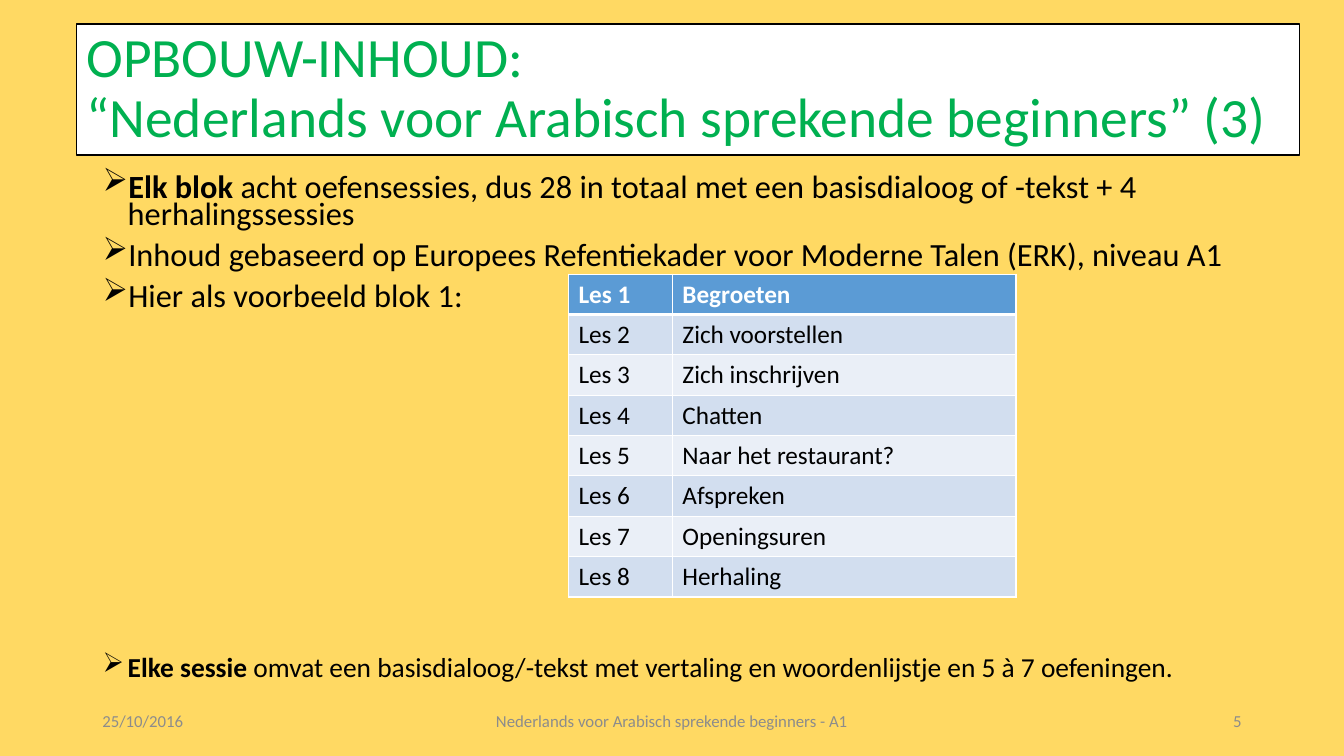
from lxml.etree import SubElement
from pptx import Presentation
from pptx.dml.color import RGBColor
from pptx.enum.shapes import MSO_SHAPE
from pptx.enum.text import MSO_ANCHOR, PP_ALIGN
from pptx.oxml.ns import qn
from pptx.util import Pt

COLORS = {
    "background": "FFD963",
    "title": "00B050",
    "white": "FFFFFF",
    "black": "000000",
    "footer": "8C8C8C",
    "header": "5B9BD5",
    "band_dark": "D2DEEF",
    "band_light": "EAEFF7",
}
FONT = "Calibri"
LESSONS = [
    "Begroeten", "Zich voorstellen", "Zich inschrijven", "Chatten",
    "Naar het restaurant?", "Afspreken", "Openingsuren", "Herhaling",
]
INTRO = [
    ("Elk blok ", "acht oefensessies, dus 28 in totaal met een basisdialoog "
     "of -tekst + 4 herhalingssessies"),
    ("", "Inhoud gebaseerd op Europees Refentiekader voor Moderne Talen (ERK), niveau A1"),
    ("", "Hier als voorbeeld blok 1:"),
]
SESSION = [
    ("Elke sessie ", "omvat een basisdialoog/-tekst met vertaling en "
     "woordenlijstje en 5 à 7 oefeningen."),
]
FOOTERS = [
    (66, 216, "25/10/2016", PP_ALIGN.LEFT),
    (318, 324, "Nederlands voor Arabisch sprekende beginners - A1", PP_ALIGN.CENTER),
    (678, 216, "5", PP_ALIGN.RIGHT),
]


def rgb(name):
    return RGBColor.from_string(COLORS[name])


def set_font(p, size, color, bold=None):
    p.font.name = FONT
    p.font.size = Pt(size)
    p.font.color.rgb = rgb(color)
    p.font.bold = bold


def add_title(s, text):
    sp = s.shapes.add_shape(MSO_SHAPE.RECTANGLE, Pt(54.7), Pt(17.2), Pt(873.4), Pt(93.6))
    sp.shadow.inherit = False
    sp.fill.solid()
    sp.fill.fore_color.rgb = rgb("white")
    sp.line.color.rgb = rgb("black")
    sp.line.width = Pt(1)
    tf = sp.text_frame
    tf.word_wrap = True
    tf.vertical_anchor = MSO_ANCHOR.MIDDLE
    p = tf.paragraphs[0]
    p.text = text
    p.alignment = PP_ALIGN.LEFT
    p.line_spacing = 0.9
    set_font(p, 39.6, "title")


def add_text_frame(s, left, top, width, height):
    tf = s.shapes.add_textbox(Pt(left), Pt(top), Pt(width), Pt(height)).text_frame
    tf.word_wrap = True
    return tf


def add_bullets(s, top, height, items, size):
    tf = add_text_frame(s, 66.2, top, 828, height)
    for i, (lead, rest) in enumerate(items):
        p = tf.add_paragraph() if i else tf.paragraphs[0]
        p.line_spacing = 0.7
        p.space_before = Pt(10 if i else 0)
        set_font(p, size, "black")
        if lead:
            r = p.add_run()
            r.text = lead
            r.font.bold = True
        p.add_run().text = rest
        pPr = p._p.get_or_add_pPr()
        pPr.set("marL", str(Pt(18)))
        pPr.set("indent", str(Pt(-18)))
        bullet = pPr.makeelement(qn("a:buChar"), {"char": "➢"})
        pPr.find(qn("a:defRPr")).addprevious(bullet)


def set_borders(cell, bottom):
    tcPr = cell._tc.get_or_add_tcPr()
    widths = {"a:lnL": 1, "a:lnR": 1, "a:lnT": 1, "a:lnB": bottom}
    for tag, width in widths.items():
        ln = SubElement(tcPr, qn(tag), w=str(Pt(width)))
        fill = SubElement(ln, qn("a:solidFill"))
        SubElement(fill, qn("a:srgbClr"), val=COLORS["white"])


def add_lessons(s, lessons):
    row_height = 28.8
    frame = s.shapes.add_table(len(lessons), 2, Pt(406.1), Pt(195.8),
                               Pt(319.7), Pt(row_height * len(lessons)))
    table = frame.table
    for column, width in zip(table.columns, (74.2, 245.5)):
        column.width = Pt(width)
    for i, lesson in enumerate(lessons):
        table.rows[i].height = Pt(row_height)
        header = i == 0
        band = "header" if header else "band_dark" if i % 2 else "band_light"
        for cell, text in zip(table.rows[i].cells, (f"Les {i + 1}", lesson)):
            set_borders(cell, 3 if header else 1)
            cell.fill.solid()
            cell.fill.fore_color.rgb = rgb(band)
            p = cell.text_frame.paragraphs[0]
            p.text = text
            set_font(p, 18, "white" if header else "black", header)


def add_footer(s, left, width, text, align):
    tf = add_text_frame(s, left, 500.5, width, 28.8)
    tf.vertical_anchor = MSO_ANCHOR.MIDDLE
    p = tf.paragraphs[0]
    p.text = text
    p.alignment = align
    set_font(p, 12, "footer")


def main():
    prs = Presentation()
    prs.slide_width, prs.slide_height = Pt(960), Pt(540)
    s = prs.slides.add_slide(prs.slide_layouts[6])
    s.background.fill.solid()
    s.background.fill.fore_color.rgb = rgb("background")
    add_title(s, "OPBOUW-INHOUD: \v“Nederlands voor Arabisch sprekende beginners” (3)")
    add_bullets(s, 122.4, 108, INTRO, 23.1)
    add_bullets(s, 467.5, 28, SESSION, 19.6)
    add_lessons(s, LESSONS)
    for footer in FOOTERS:
        add_footer(s, *footer)
    prs.save("out.pptx")


if __name__ == "__main__":
    main()
